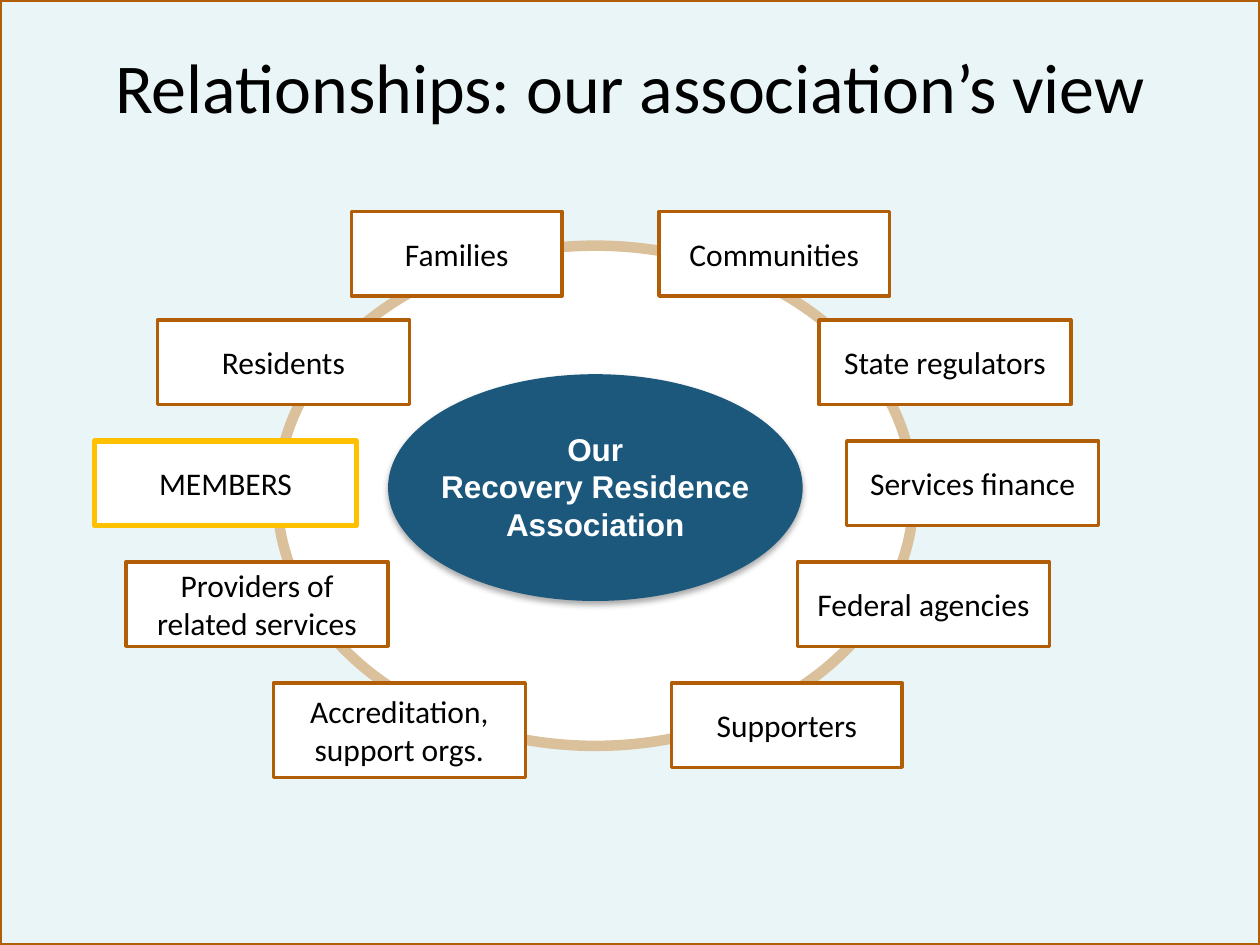
from lxml.etree import SubElement
from pptx import Presentation
from pptx.dml.color import RGBColor
from pptx.enum.shapes import MSO_SHAPE
from pptx.enum.text import MSO_ANCHOR, PP_ALIGN
from pptx.oxml.ns import qn
from pptx.util import Inches, Pt

WIDTH, HEIGHT = 10, 7.5
WHITE, BLACK, BROWN, GOLD = "FFFFFF", "000000", "B25E07", "FFC000"
TITLE = "Relationships: our association’s view"
CENTER_LINES = ["Our", "Recovery Residence", "Association"]
ROW_TOPS = [1.68, 2.54, 3.5, 4.46, 5.42]
BOX_HEIGHT = 0.67
PARTNERS = [
    ("MEMBERS", 2, 0.75, 2.08),
    ("Providers of related services", 3, 1, 2.08),
    ("Residents", 1, 1.25, 2),
    ("Accreditation, support orgs.", 4, 2.17, 2),
    ("Services finance", 2, 6.72, 2),
    ("Families", 0, 2.79, 1.67),
    ("State regulators", 1, 6.5, 2),
    ("Communities", 0, 5.23, 1.83),
    ("Federal agencies", 3, 6.33, 2),
    ("Supporters", 4, 5.33, 1.83),
]
SPECIAL_LINES = {"MEMBERS": (GOLD, 3)}
SPECIAL_HEIGHTS = {"Accreditation, support orgs.": 0.75}


def color(value):
    return RGBColor.from_string(value)


def add_shape(slide, kind, area, fill, line=None):
    shape = slide.shapes.add_shape(kind, *map(Inches, area))
    shape.shadow.inherit = False
    shape.fill.solid()
    shape.fill.fore_color.rgb = color(fill)
    if line:
        shape.line.color.rgb = color(line[0])
        shape.line.width = Pt(line[1])
    else:
        shape.line.fill.background()
    return shape


def write(shape, lines, size, font, text_color, anchor, bold=False):
    frame = shape.text_frame
    frame.word_wrap = True
    frame.vertical_anchor = anchor
    for index, line in enumerate(lines):
        paragraph = frame.add_paragraph() if index else frame.paragraphs[0]
        paragraph.alignment = PP_ALIGN.CENTER
        run = paragraph.add_run()
        run.text = line
        run.font.size = Pt(size)
        run.font.name = font
        run.font.bold = bold
        run.font.color.rgb = color(text_color)


def add_text(slide, area, *style, **options):
    write(slide.shapes.add_textbox(*map(Inches, area)), *style, **options)


def set_alpha(parent, percent):
    SubElement(parent, qn("a:alpha"), val=str(percent * 1000))


def add_shadow(shape, blur, distance, percent):
    effects = shape._element.spPr.find(qn("a:effectLst"))
    shadow = SubElement(effects, qn("a:outerShdw"), blurRad=str(Pt(blur)),
                        dist=str(Pt(distance)), dir="5400000", rotWithShape="0")
    set_alpha(SubElement(shadow, qn("a:srgbClr"), val=BLACK), percent)


def main():
    presentation = Presentation()
    presentation.slide_width = Inches(WIDTH)
    presentation.slide_height = Inches(HEIGHT)
    slide = presentation.slides.add_slide(presentation.slide_layouts[6])

    backdrop = add_shape(slide, MSO_SHAPE.RECTANGLE, (0, 0, WIDTH, HEIGHT), "389EB2", (BROWN, 2))
    set_alpha(backdrop._element.spPr.find(qn("a:solidFill"))[0], 10)
    add_shape(slide, MSO_SHAPE.OVAL, (2.2, 1.95, 5.05, 3.97), WHITE, ("DAC19B", 6))
    add_text(slide, (0.5, 0.3, 9, 1.25), [TITLE], 40, "Calibri", BLACK, MSO_ANCHOR.TOP)

    for name, row, left, width in PARTNERS:
        area = (left, ROW_TOPS[row], width, SPECIAL_HEIGHTS.get(name, BOX_HEIGHT))
        box = add_shape(slide, MSO_SHAPE.RECTANGLE, area, WHITE, SPECIAL_LINES.get(name, (BROWN, 2)))
        write(box, [name], 18, "Calibri", BLACK, MSO_ANCHOR.MIDDLE)

    hub = add_shape(slide, MSO_SHAPE.OVAL, (3.08, 2.97, 3.29, 1.8), "1B587C")
    add_shadow(hub, 3.5, 2.2, 32)
    add_text(slide, (3.16, 3.36, 3.13, 1.01), CENTER_LINES, 18, "Arial", WHITE,
             MSO_ANCHOR.TOP, bold=True)
    presentation.save("out.pptx")


if __name__ == "__main__":
    main()
